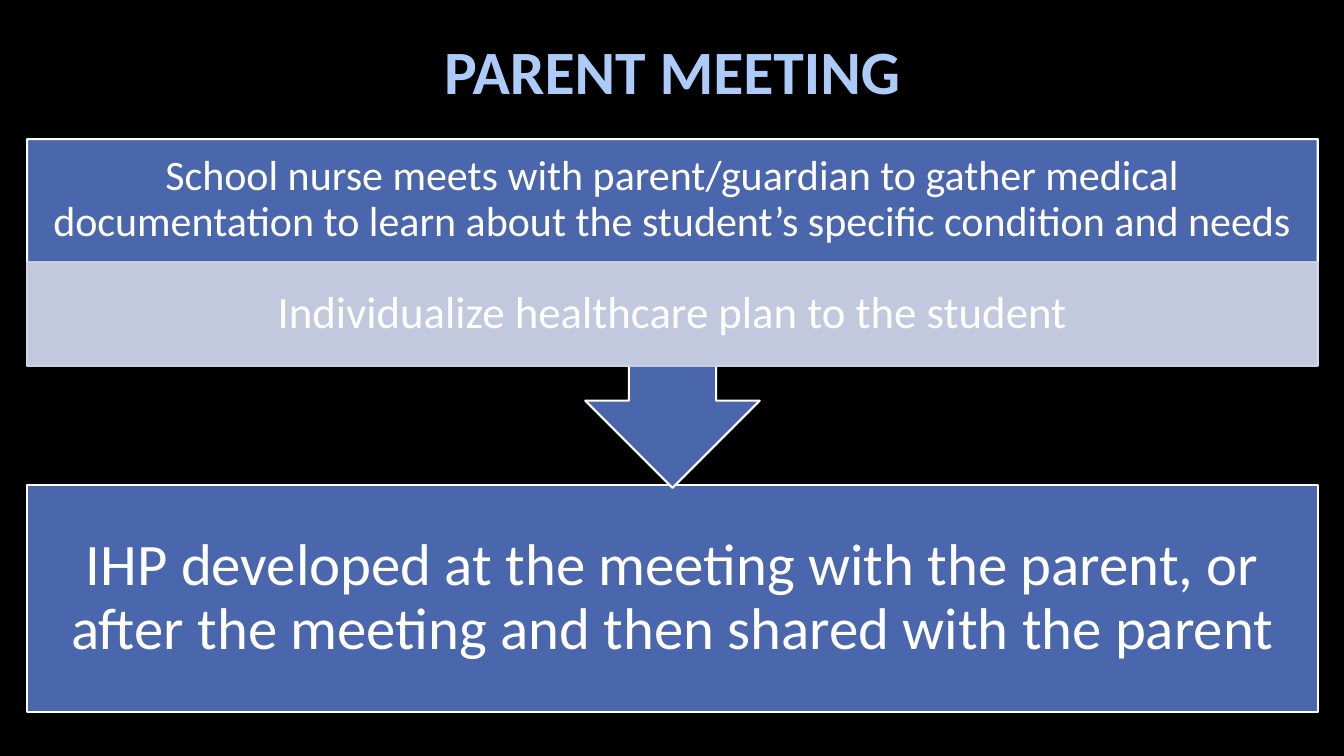
"""Build the parent meeting slide."""
from dataclasses import dataclass

import lxml.etree
import pptx
import pptx.dml.color
import pptx.enum.shapes
import pptx.enum.text
import pptx.oxml.ns
import pptx.util

Inches = pptx.util.Inches
Shape = pptx.enum.shapes.MSO_SHAPE
COLORS = {"back": "000000", "title": "ACCBF9", "blue": "4A66AC",
          "pale": "D0D3E3", "white": "FFFFFF"}
LEFT, WIDTH = 0.27, 12.8


@dataclass
class Block:
    """A full-width block; insets are left, top, right, bottom in inches."""
    kind: Shape
    top: float
    height: float
    text: str
    size: int
    insets: tuple[float, float, float, float]
    fill: str = "blue"
    line: str = "white"
    alpha: int = 100


BLOCKS = [
    Block(Shape.RECTANGLE, 4.81, 2.25,
          "IHP developed at the meeting with the parent, or after the meeting "
          "and then shared with the parent", 42, (0.33, 0.33, 0.33, 0.33)),
    Block(Shape.DOWN_ARROW_CALLOUT, 1.38, 3.46,
          "School nurse meets with parent/guardian to gather medical documentation "
          "to learn about the student’s specific condition and needs",
          30, (0.23, 0.23, 0.23, 1.27)),
    Block(Shape.RECTANGLE, 2.6, 1.03, "Individualize healthcare plan to the student",
          32, (0.25, 0.04, 0.25, 0.04), fill="pale", line="pale", alpha=90),
]


def rgb(name: str) -> pptx.dml.color.RGBColor:
    """Return the named colour."""
    return pptx.dml.color.RGBColor.from_string(COLORS[name])


def write(tf, text: str, *, size: int, color: str = "white", bold: bool = False) -> None:
    """Write one centred paragraph into a text frame."""
    tf.word_wrap = True
    tf.auto_size = pptx.enum.text.MSO_AUTO_SIZE.NONE
    tf.vertical_anchor = pptx.enum.text.MSO_ANCHOR.MIDDLE
    p = tf.paragraphs[0]
    p.alignment = pptx.enum.text.PP_ALIGN.CENTER
    p.line_spacing = 0.9
    r = p.add_run()
    r.text = text
    r.font.name = "Calibri"
    r.font.size = pptx.util.Pt(size)
    r.font.bold = bold
    r.font.color.rgb = rgb(color)


def add_block(s, block: Block) -> None:
    """Draw one block with its text."""
    sp = s.shapes.add_shape(block.kind, Inches(LEFT), Inches(block.top),
                            Inches(WIDTH), Inches(block.height))
    sp.shadow.inherit = False
    sp.fill.solid()
    sp.fill.fore_color.rgb = rgb(block.fill)
    sp.line.color.rgb = rgb(block.line)
    sp.line.width = pptx.util.Pt(1.5)
    if block.alpha < 100:
        for color in sp._element.spPr.iter(pptx.oxml.ns.qn("a:srgbClr")):
            alpha = lxml.etree.SubElement(color, pptx.oxml.ns.qn("a:alpha"))
            alpha.set("val", str(block.alpha * 1000))
    tf = sp.text_frame
    tf.margin_left, tf.margin_top, tf.margin_right, tf.margin_bottom = map(
        Inches, block.insets)
    write(tf, block.text, size=block.size)


def main() -> None:
    """Build and save the slide."""
    prs = pptx.Presentation()
    prs.slide_width, prs.slide_height = Inches(13.33), Inches(7.5)
    s = prs.slides.add_slide(prs.slide_layouts[5])
    s.background.fill.solid()
    s.background.fill.fore_color.rgb = rgb("back")
    title = s.shapes.title
    title.left, title.top, title.width, title.height = map(
        Inches, (1.01, 0.3, 11.32, 0.88))
    write(title.text_frame, "PARENT MEETING", size=44, color="title", bold=True)
    for block in BLOCKS:
        add_block(s, block)
    prs.save("out.pptx")


if __name__ == "__main__":
    main()
